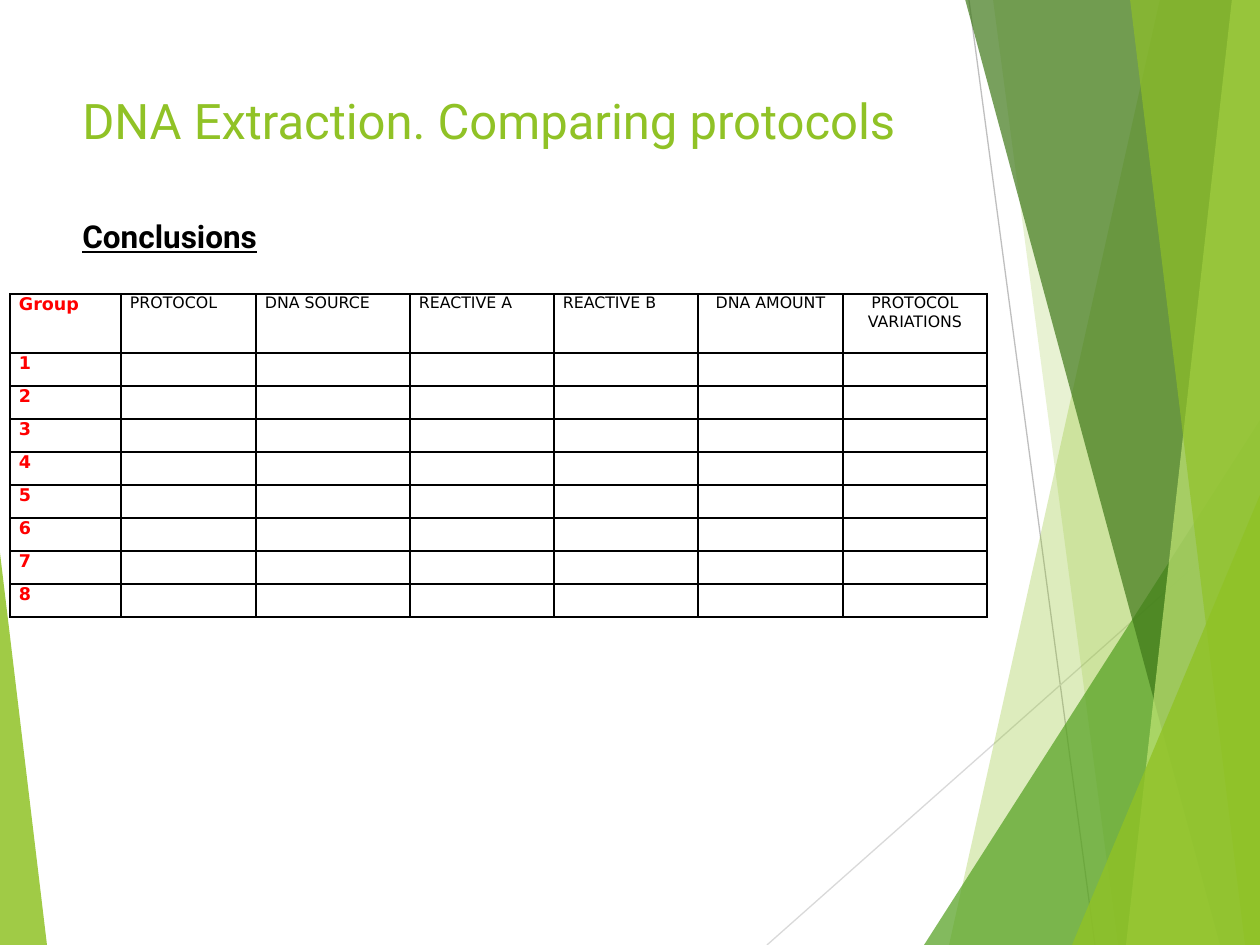
import pptx
import pptx.util
import pptx.dml.color
import pptx.enum.shapes
import pptx.enum.text
import pptx.oxml.ns
from lxml import etree

WIDE, HIGH = 1260, 945
LIME, BLACK, RED = "90C226", "000000", "FF0000"
HEADS = ["Group", "PROTOCOL", "DNA SOURCE", "REACTIVE A", "REACTIVE B",
         "DNA AMOUNT", "PROTOCOL VARIATIONS"]
COLS = [111, 135, 154, 144, 144, 145, 144]
GROUPS = 8
ALIGN = pptx.enum.text.PP_ALIGN


def px(num):
    """Turn pixels into EMU."""
    return pptx.util.Emu(round(num * 914400 / 126))


def color(code):
    """Turn a hex string into a colour."""
    return pptx.dml.color.RGBColor.from_string(code)


def add_node(parent, tag, **attrs):
    """Append a namespaced XML child."""
    return etree.SubElement(parent, pptx.oxml.ns.qn(tag), **attrs)


def paint(shape, code, alpha):
    """Fill a shape with a see-through colour and no outline."""
    shape.shadow.inherit = False
    shape.line.fill.background()
    shape.fill.solid()
    shape.fill.fore_color.rgb = color(code)
    tint = next(shape._element.spPr.iter(pptx.oxml.ns.qn("a:srgbClr")))
    add_node(tint, "a:alpha", val=str(alpha * 1000))


def add_line(slide, start, end, code):
    """Draw a thin straight line."""
    line = slide.shapes.add_connector(
        pptx.enum.shapes.MSO_CONNECTOR.STRAIGHT, *map(px, start + end))
    line.line.color.rgb = color(code)
    line.line.width = pptx.util.Pt(0.75)
    add_node(line._element.spPr, "a:effectLst")


def add_band(slide, top, bottom, code, alpha):
    """Draw a band from a slanted left edge to the right slide edge."""
    build = slide.shapes.build_freeform(px(top), px(-1))
    corners = [(WIDE, -1), (WIDE, HIGH), (bottom, HIGH)]
    build.add_line_segments([(px(x), px(y)) for x, y in corners])
    paint(build.convert_to_shape(), code, alpha)


def add_wedge(slide, left, top, width, apex, code, alpha):
    """Draw a triangle that stands on the bottom slide edge."""
    shape = slide.shapes.add_shape(
        pptx.enum.shapes.MSO_SHAPE.ISOSCELES_TRIANGLE,
        px(left), px(top), px(width), px(HIGH - top))
    shape.adjustments[0] = apex
    paint(shape, code, alpha)


def style(para, size, face, code, bold=False):
    """Set the font of a paragraph."""
    font = para.font
    font.size = pptx.util.Pt(size)
    font.name = face
    font.bold = bold
    font.color.rgb = color(code)


def add_text(slide, words, box, size, code, wrap=True, bold=False):
    """Add a one-line text box."""
    shape = slide.shapes.add_textbox(*map(px, box))
    frame = shape.text_frame
    frame.word_wrap = wrap
    if not wrap:
        frame.auto_size = pptx.enum.text.MSO_AUTO_SIZE.SHAPE_TO_FIT_TEXT
    para = frame.paragraphs[0]
    para.text = words
    style(para, size, "Roboto", code, bold)
    para.font.underline = bold


def add_edges(cell):
    """Give a cell thin black borders and no fill."""
    props = cell._tc.get_or_add_tcPr()
    for side in "LRTB":
        edge = add_node(props, "a:ln" + side, w="12700")
        fill = add_node(edge, "a:solidFill")
        add_node(fill, "a:srgbClr", val=BLACK)
    cell.fill.background()


def fill_cell(cell, words, first, align):
    """Write one table cell."""
    cell.margin_left = cell.margin_right = px(9)
    cell.margin_top = cell.margin_bottom = 0
    add_edges(cell)
    para = cell.text_frame.paragraphs[0]
    if words:
        para.text = words
        para.alignment = align
        style(para, 10 if first else 9, "DejaVu Sans",
              RED if first else BLACK, first)
    else:
        add_node(para._p, "a:endParaRPr", sz="900")


def add_grid(slide):
    """Add the table of groups."""
    rows = [59] + [33] * GROUPS
    shape = slide.shapes.add_table(len(rows), len(COLS), px(10), px(294),
                                   px(sum(COLS)), px(sum(rows)))
    table = shape.table
    table.first_row = table.horz_banding = False
    for col, width in zip(table.columns, COLS):
        col.width = px(width)
    blank = [""] * (len(COLS) - 1)
    texts = [HEADS] + [[str(num + 1)] + blank for num in range(GROUPS)]
    for i, line in enumerate(texts):
        table.rows[i].height = px(rows[i])
        for j, words in enumerate(line):
            align = ALIGN.CENTER if j > 4 else ALIGN.JUSTIFY
            fill_cell(table.cell(i, j), words, j == 0, align)


def add_decor(slide):
    """Draw the lines, bands and wedges behind the content."""
    add_line(slide, (969, 0), (1095, HIGH), "BFBFBF")
    add_line(slide, (WIDE, 508), (767, HIGH), "D9D9D9")
    add_band(slide, 1160, 949, LIME, 30)
    add_band(slide, 993, 1118, LIME, 20)
    add_wedge(slide, 924, 420, 336, 1, "54A021", 72)
    add_band(slide, 965, 1220, "3F7819", 70)
    add_band(slide, 1232, 1126, "C0E474", 70)
    add_band(slide, 1130, 1245, LIME, 65)
    add_wedge(slide, 1072, 495, 188, 1, LIME, 80)
    add_wedge(slide, 0, 553, 47, 0, LIME, 85)


def main():
    """Build and save the slide."""
    deck = pptx.Presentation()
    deck.slide_width, deck.slide_height = px(WIDE), px(HIGH)
    slide = deck.slides.add_slide(deck.slide_layouts[6])
    add_decor(slide)
    add_text(slide, "DNA Extraction. Comparing protocols",
             (70, 84, 917, 91), 28, LIME)
    add_grid(slide)
    add_text(slide, "Conclusions", (70, 211, 204, 50), 18, BLACK,
             wrap=False, bold=True)
    deck.save("out.pptx")


if __name__ == "__main__":
    main()
